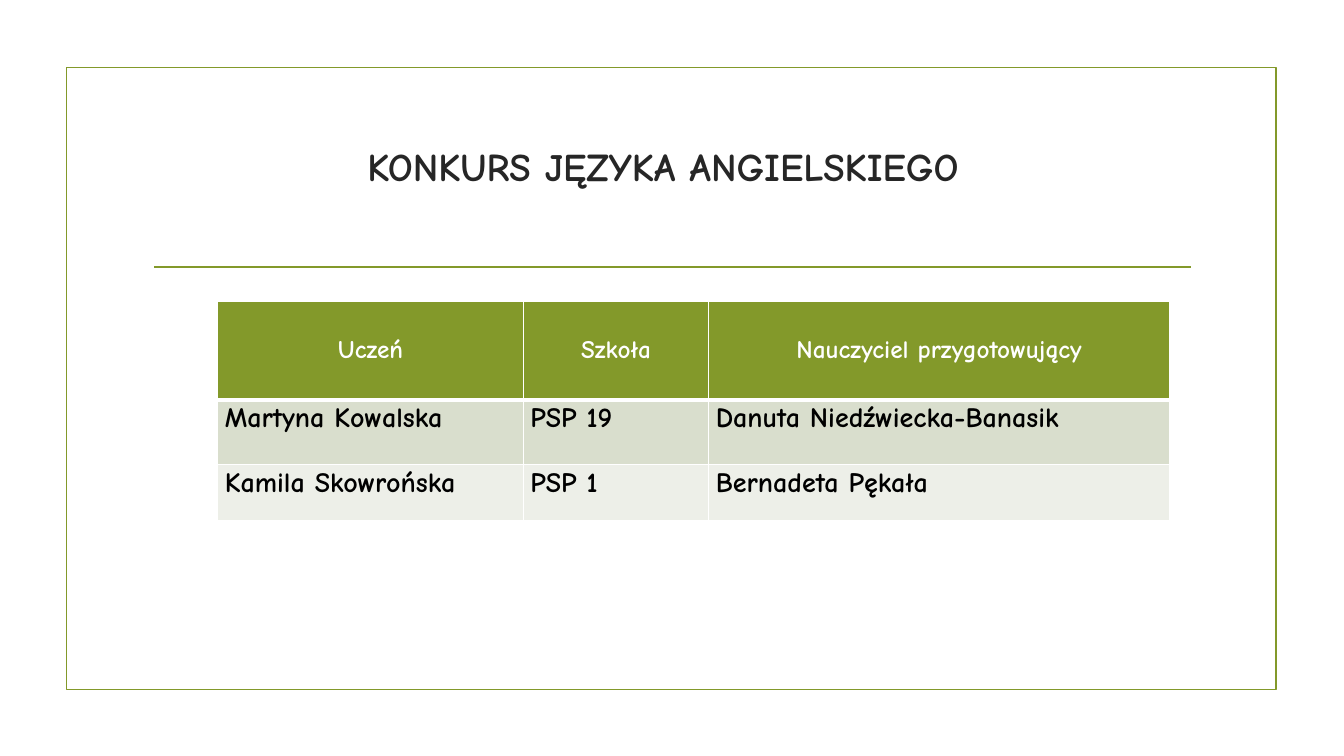
import pptx
import pptx.dml.color
import pptx.enum.shapes
import pptx.enum.text
import pptx.oxml
import pptx.oxml.ns
import pptx.util
from pptx.util import Inches

COLORS = {
    "olive": "83992A",
    "title": "262626",
    "white": "FFFFFF",
    "black": "000000",
    "band_dark": "D9DECD",
    "band_light": "EDEFE8",
}
FONT = "Comic Neue"
HEADERS = ["Uczeń", "Szkoła", "Nauczyciel przygotowujący"]
RESULTS = [
    ["Martyna Kowalska", "PSP 19", "Danuta Niedźwiecka-Banasik"],
    ["Kamila Skowrońska", "PSP 1", "Bernadeta Pękała"],
]
COLUMN_WIDTHS = [3.03, 1.84, 4.57]
ROW_HEIGHTS = [0.98, 0.64, 0.55]


def color(name):
    return pptx.dml.color.RGBColor.from_string(COLORS[name])


def format_paragraph(paragraph, size, color_name, centered=False):
    paragraph.font.name = FONT
    paragraph.font.size = pptx.util.Pt(size)
    paragraph.font.bold = True
    paragraph.font.color.rgb = color(color_name)
    paragraph.alignment = (
        pptx.enum.text.PP_ALIGN.CENTER if centered else pptx.enum.text.PP_ALIGN.LEFT
    )


def set_line(shape):
    shape.line.color.rgb = color("olive")
    shape.line.width = pptx.util.Pt(1.25)


def add_frame(slide, left, top, width, height):
    """Outline of the slide and the rule below its title."""
    frame = slide.shapes.add_shape(
        pptx.enum.shapes.MSO_SHAPE.RECTANGLE,
        Inches(left), Inches(top), Inches(width), Inches(height),
    )
    frame.shadow.inherit = False
    frame.fill.background()
    set_line(frame)

    rule_top = Inches(top + 1.98)
    rule = slide.shapes.add_connector(
        pptx.enum.shapes.MSO_CONNECTOR.STRAIGHT,
        Inches(left + 0.87), rule_top, Inches(left + width - 0.85), rule_top,
    )
    set_line(rule)
    properties = rule._element.spPr
    properties.append(properties.makeelement(pptx.oxml.ns.qn("a:effectLst"), {}))


def place_title(slide, left, top, width, height):
    title = slide.shapes.title
    title.left, title.top = Inches(left), Inches(top)
    title.width, title.height = Inches(width), Inches(height)
    title.text_frame.text = "KONKURS JĘZYKA ANGIELSKIEGO"
    title.text_frame.vertical_anchor = pptx.enum.text.MSO_ANCHOR.MIDDLE
    format_paragraph(title.text_frame.paragraphs[0], 28, "title", centered=True)


def set_borders(cell, top, bottom):
    """White borders; top and bottom are widths in points."""
    properties = cell._tc.get_or_add_tcPr()
    widths = {"lnL": 1, "lnR": 1, "lnT": top, "lnB": bottom}
    for position, (side, width) in enumerate(widths.items()):
        border = pptx.oxml.parse_xml(
            f'<a:{side} {pptx.oxml.ns.nsdecls("a")} w="{pptx.util.Pt(width)}">'
            f'<a:solidFill><a:srgbClr val="{COLORS["white"]}"/></a:solidFill></a:{side}>'
        )
        properties.insert(position, border)


def format_cell(cell, text, row):
    is_header = row == 0
    cell.text = text
    paragraph = cell.text_frame.paragraphs[0]
    horizontal, vertical = (0.08, 0.05) if is_header else (0.07, 0)
    cell.margin_left = cell.margin_right = Inches(horizontal)
    cell.margin_top = cell.margin_bottom = Inches(vertical)
    cell.fill.solid()
    if is_header:
        cell.fill.fore_color.rgb = color("olive")
        cell.vertical_anchor = pptx.enum.text.MSO_ANCHOR.MIDDLE
        format_paragraph(paragraph, 18, "white", centered=True)
    else:
        cell.fill.fore_color.rgb = color("band_dark" if row % 2 else "band_light")
        paragraph.line_spacing = 1.07
        format_paragraph(paragraph, 20, "black")
    set_borders(cell, top=3 if row == 1 else 1, bottom=3 if is_header else 1)


def add_results_table(slide, left, top):
    rows = [HEADERS] + RESULTS
    table = slide.shapes.add_table(
        len(rows), len(HEADERS), Inches(left), Inches(top),
        Inches(sum(COLUMN_WIDTHS)), Inches(sum(ROW_HEIGHTS)),
    ).table
    for column, width in zip(table.columns, COLUMN_WIDTHS):
        column.width = Inches(width)
    for row, (texts, height) in enumerate(zip(rows, ROW_HEIGHTS)):
        table.rows[row].height = Inches(height)
        for column, text in enumerate(texts):
            format_cell(table.cell(row, column), text, row)


def main():
    presentation = pptx.Presentation()
    presentation.slide_width = Inches(13.33)
    presentation.slide_height = Inches(7.5)
    slide = presentation.slides.add_slide(presentation.slide_layouts[5])
    add_frame(slide, 0.66, 0.67, 12, 6.17)
    place_title(slide, 1.13, 0.95, 10.89, 1.4)
    add_results_table(slide, 2.16, 2.99)
    presentation.save("out.pptx")


if __name__ == "__main__":
    main()
